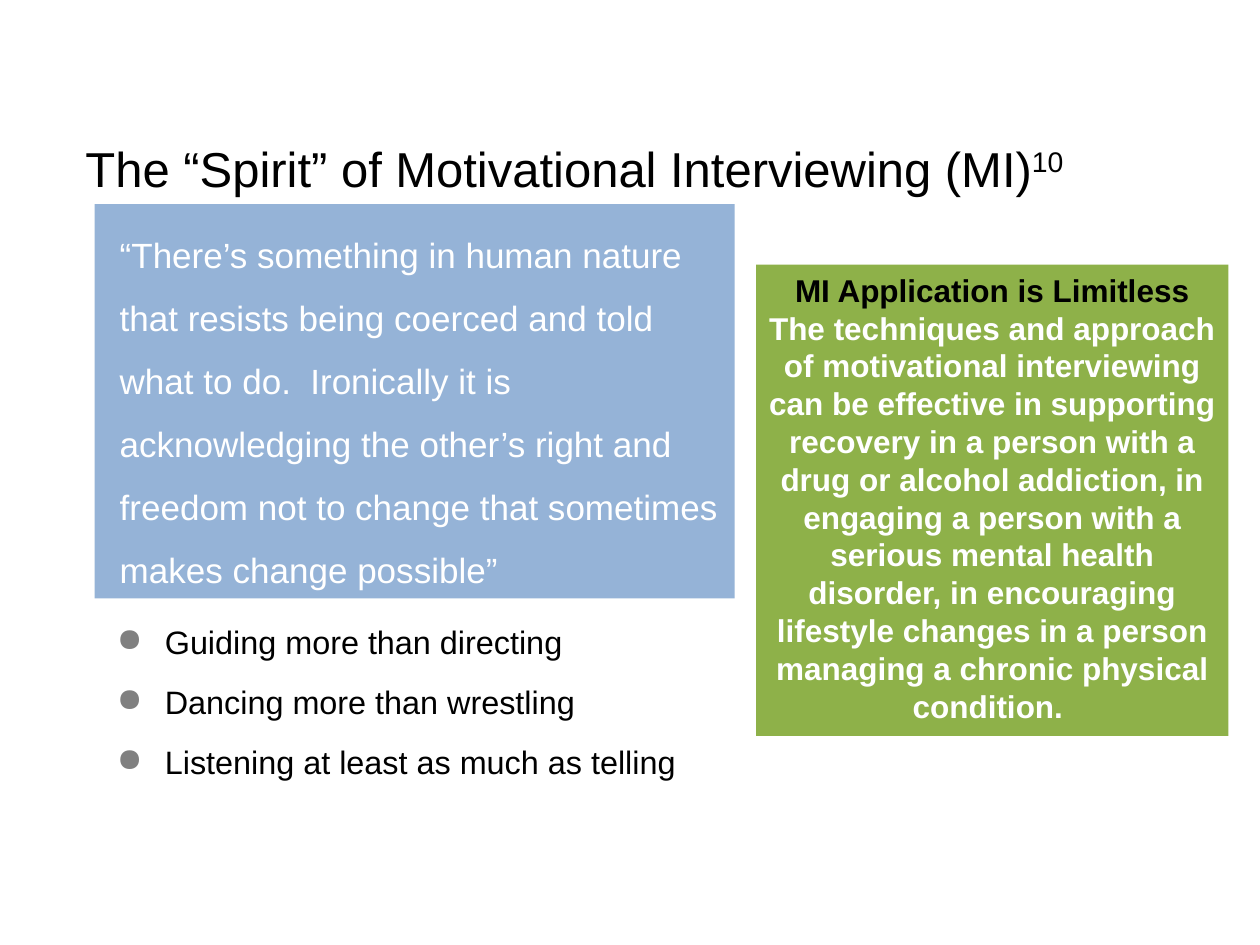
from lxml import etree
from pptx import Presentation
from pptx.dml.color import RGBColor
from pptx.enum import shapes, text
from pptx.oxml import ns
from pptx.util import Inches, Pt

TITLE = "The “Spirit” of Motivational Interviewing (MI)"
QUOTE = (
    "“There’s something in human nature that resists being coerced and told "
    "what to do.  Ironically it is acknowledging the other’s right and freedom "
    "not to change that sometimes makes change possible”"
)
HABITS = [
    "Guiding more than directing",
    "Dancing more than wrestling",
    "Listening at least as much as telling",
]
APPLICATION = (
    "The techniques and approach of motivational interviewing can be effective "
    "in supporting recovery in a person with a drug or alcohol addiction, in "
    "engaging a person with a serious mental health disorder, in encouraging "
    "lifestyle changes in a person managing a chronic physical condition. "
)


def colour(value):
    return RGBColor.from_string(value)


def apply(target, values):
    """Set each attribute named in values on target."""
    for name, value in values.items():
        setattr(target, name, value)


class SlideBuilder:
    font = "Arial"
    black, white, grey = "000000", "FFFFFF", "808080"
    blue, green = "95B3D7", "8EB149"

    def __init__(self, page):
        self.page = page

    def span(self, para, words, size, ink, bold=False):
        span = para.add_run()
        span.text = words
        apply(span.font, {"name": self.font, "size": Pt(size), "bold": bold})
        span.font.color.rgb = colour(ink)
        return span

    def text_box(self, left, top, width, height):
        box = self.page.shapes.add_textbox(
            Inches(left), Inches(top), Inches(width), Inches(height))
        box.text_frame.word_wrap = True
        return box.text_frame

    def title(self, words, note, place):
        frame = self.text_box(*place)
        frame.margin_top = Inches(0.1)
        para = frame.paragraphs[0]
        self.span(para, words, 28, self.black)
        raised = self.span(para, note, 28, self.black)
        raised.font._element.set("baseline", "30000")

    def bullet(self, para):
        """Give a paragraph a grey dot with a hanging indent."""
        props = para._p.get_or_add_pPr()
        indent = Inches(0.38)
        props.set("marL", str(indent))
        props.set("indent", str(-indent))
        tint = etree.SubElement(props, ns.qn("a:buClr"))
        etree.SubElement(tint, ns.qn("a:srgbClr"), val=self.grey)
        etree.SubElement(props, ns.qn("a:buChar"), char="●")

    def bullets(self, items, place):
        frame = self.text_box(*place)
        for index, item in enumerate(items):
            para = frame.add_paragraph() if index else frame.paragraphs[0]
            self.bullet(para)
            para.space_before = Pt(12 if index else 0)
            self.span(para, item, 18.5, self.black)

    def panel(self, place, fill, lines, size, bold=False, frame_format=None, para_format=None):
        """Draw a filled rectangle; lines holds (words, ink) pairs."""
        box = self.page.shapes.add_shape(
            shapes.MSO_SHAPE.RECTANGLE, *(Inches(value) for value in place))
        box.shadow.inherit = False
        box.fill.solid()
        box.fill.fore_color.rgb = colour(fill)
        box.line.fill.background()
        frame = box.text_frame
        apply(frame, {
            "word_wrap": True,
            "auto_size": text.MSO_AUTO_SIZE.SHAPE_TO_FIT_TEXT,
            "vertical_anchor": text.MSO_ANCHOR.TOP,
            **(frame_format or {}),
        })
        for index, (words, ink) in enumerate(lines):
            para = frame.add_paragraph() if index else frame.paragraphs[0]
            apply(para, {"alignment": text.PP_ALIGN.LEFT, **(para_format or {})})
            self.span(para, words, size, ink, bold)


def main():
    deck = Presentation()
    apply(deck, {"slide_width": Inches(10), "slide_height": Inches(7.5)})
    slide = SlideBuilder(deck.slides.add_slide(deck.slide_layouts[6]))

    slide.title(TITLE, "10", (0.58, 1, 8.75, 0.92))
    slide.bullets(HABITS, (0.83, 4.89, 4.92, 1.36))
    slide.panel(
        (0.75, 1.62, 5.08, 3.13), slide.blue, [(QUOTE, slide.white)], 20,
        frame_format={"margin_left": Inches(0.2), "vertical_anchor": text.MSO_ANCHOR.MIDDLE},
        para_format={"line_spacing": 1.5})
    slide.panel(
        (6, 2.1, 3.75, 3.74), slide.green,
        [("MI Application is Limitless", slide.black), (APPLICATION, slide.white)],
        18, bold=True, para_format={"alignment": text.PP_ALIGN.CENTER})

    deck.save("out.pptx")


if __name__ == "__main__":
    main()
